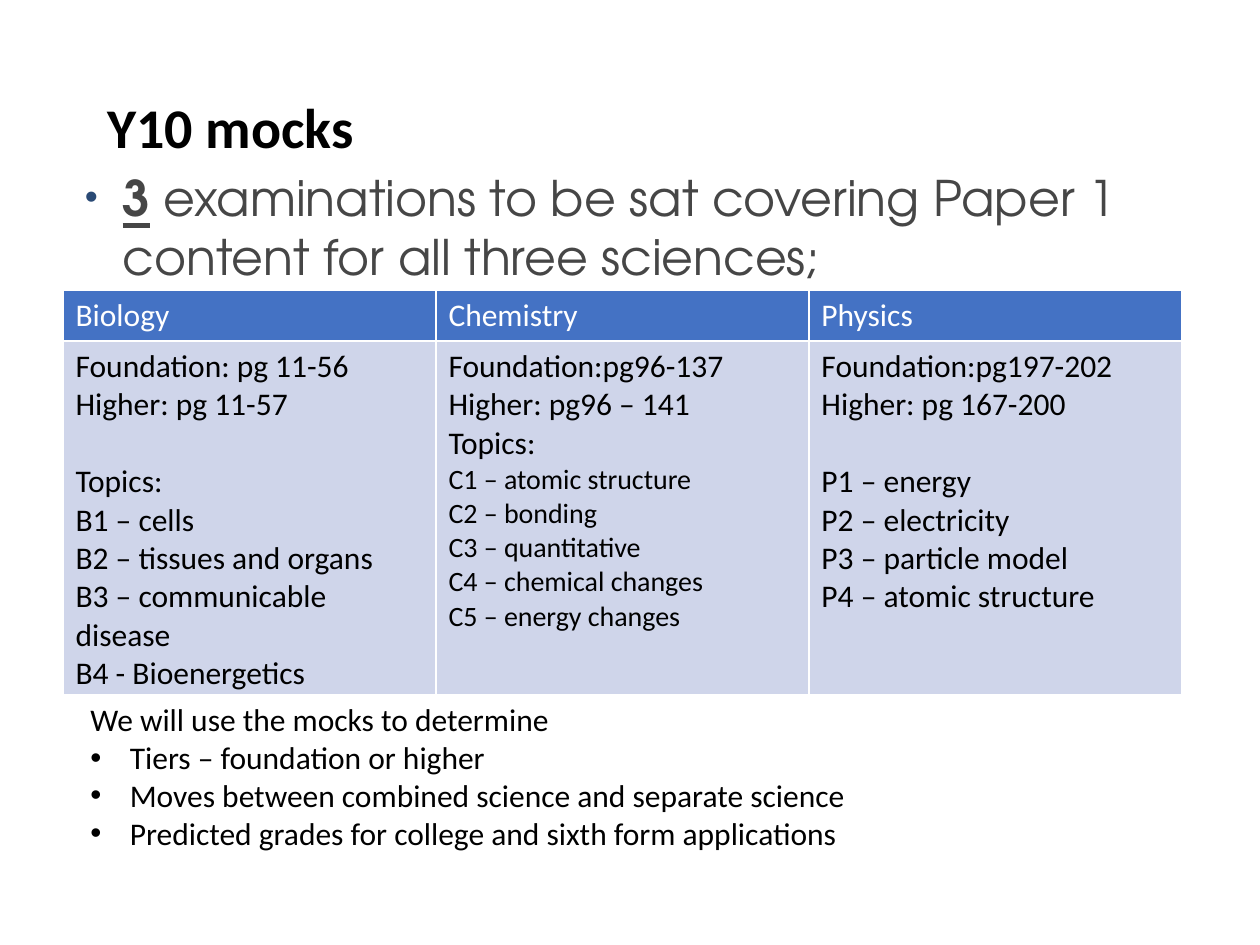
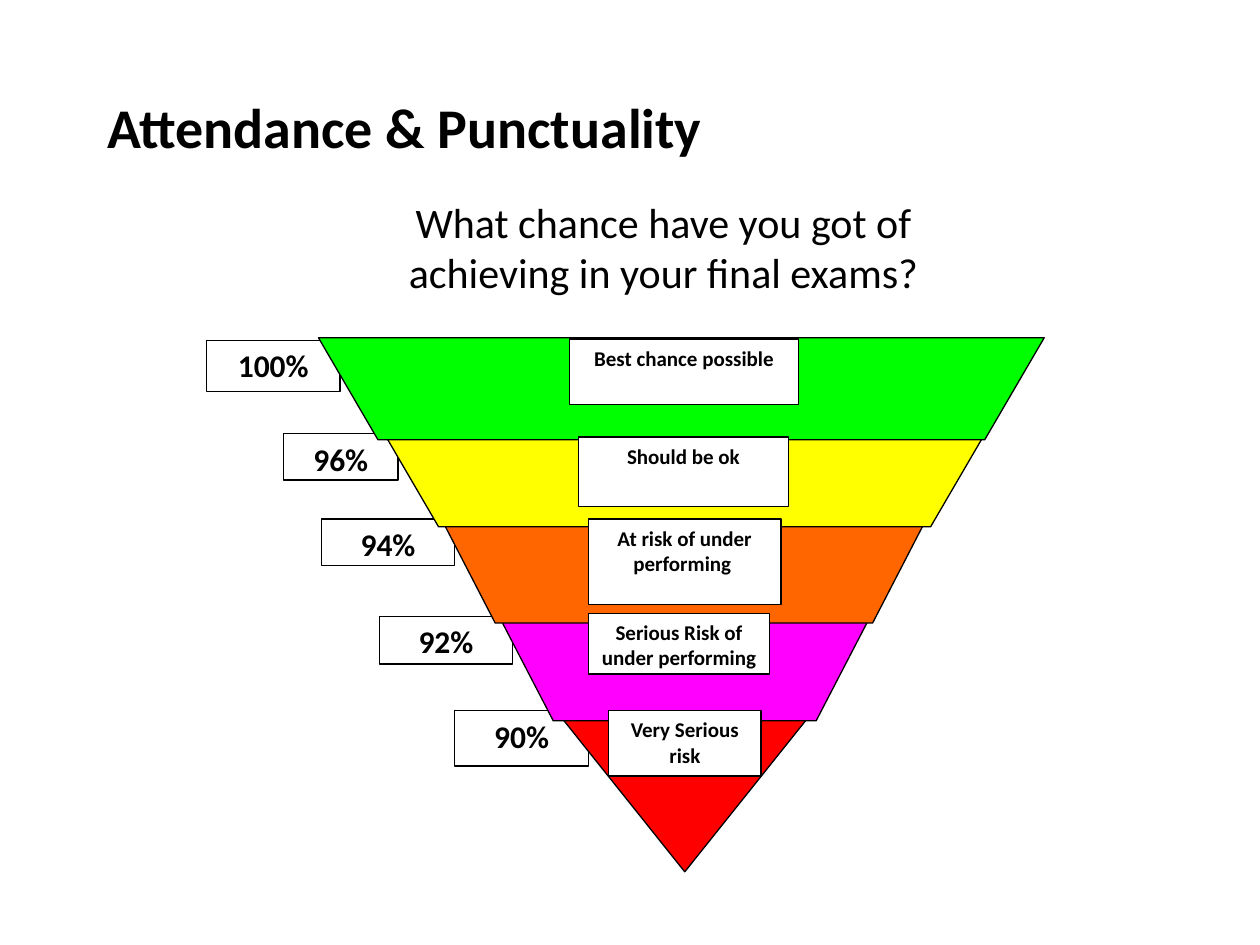
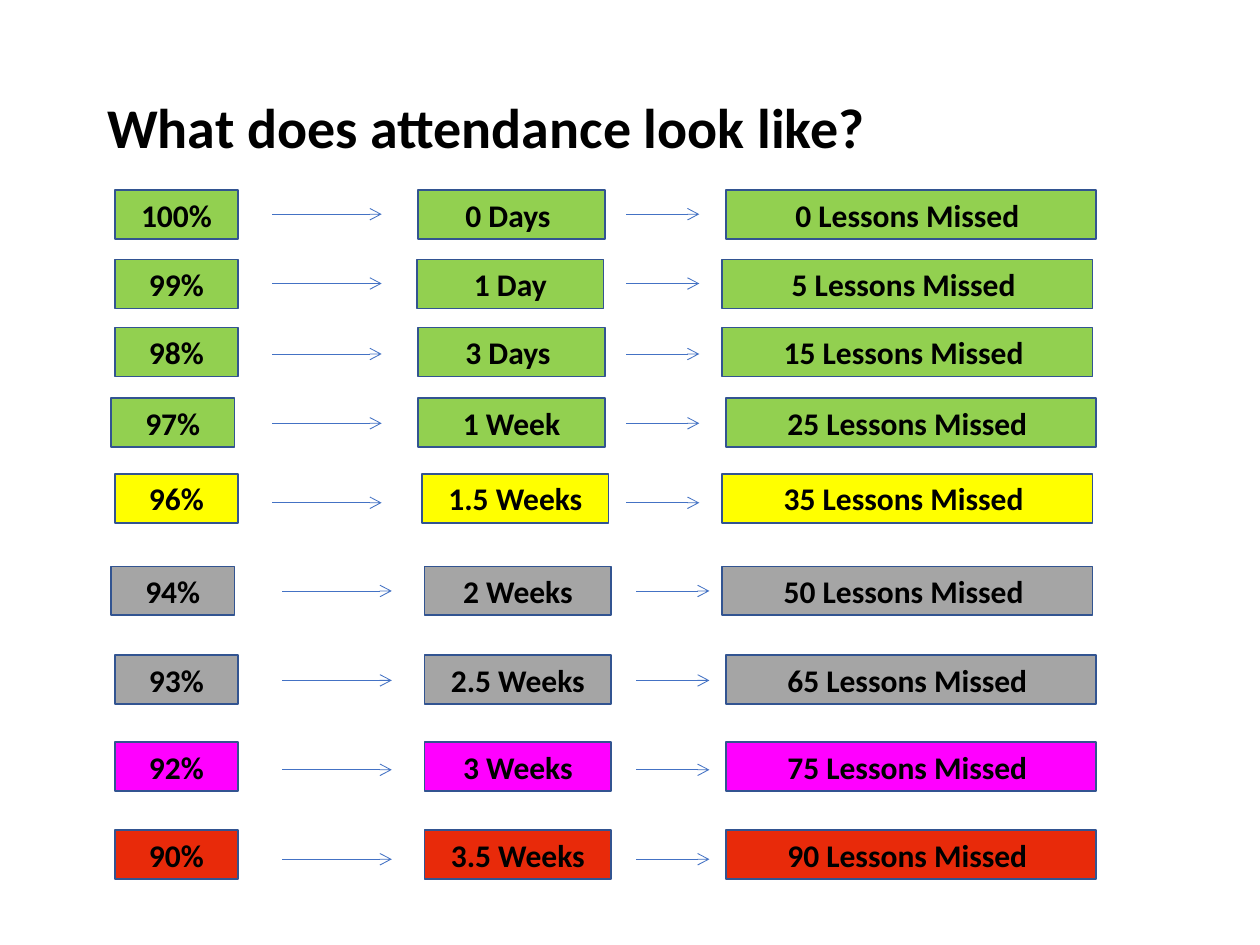
from collections import namedtuple
from dataclasses import dataclass

from lxml.etree import SubElement as Sub
from pptx import Presentation
from pptx.dml.color import RGBColor as Rgb
from pptx.enum.shapes import MSO_CONNECTOR as Wire, MSO_SHAPE as Form
from pptx.enum.text import MSO_ANCHOR as Anchor, PP_ALIGN as Align
from pptx.oxml.ns import qn
from pptx.util import Pt

Box = namedtuple("Box", "x y w h")


@dataclass(frozen=True)
class Theme:
    font: str = "Calibri"
    lead: str = "TeX Gyre Adventor"
    black: str = "000000"
    white: str = "FFFFFF"
    gray: str = "464646"
    navy: str = "2A4A75"
    edge: str = "325491"
    blue: str = "4472C4"
    pale: str = "CFD5EA"
    leaf: str = "92D050"
    green: str = "00FF00"
    yellow: str = "FFFF00"
    orange: str = "FF6600"
    pink: str = "FF00FF"
    red: str = "FF0000"
    brick: str = "E82A0A"
    stone: str = "A5A5A5"
    title: int = 32
    big: int = 28
    ask: int = 24
    body: int = 18
    list: int = 16
    note: int = 12


T = Theme()

COURSES = [
    ("Biology", ["Foundation: pg 11-56", "Higher: pg 11-57"],
     ["Topics:", "B1 – cells", "B2 – tissues and organs",
      "B3 – communicable disease", "B4 - Bioenergetics"], T.body, 22),
    ("Chemistry", ["Foundation:pg96-137", "Higher: pg96 – 141", "Topics:"],
     ["C1 – atomic structure", "C2 – bonding", "C3 – quantitative",
      "C4 – chemical changes", "C5 – energy changes"], T.list, 0),
    ("Physics", ["Foundation:pg197-202", "Higher: pg 167-200"],
     ["P1 – energy", "P2 – electricity", "P3 – particle model",
      "P4 – atomic structure"], T.body, 22),
]

USES = ["Tiers – foundation or higher",
        "Moves between combined science and separate science",
        "Predicted grades for college and sixth form applications"]

TAGS = [
    ("96%", Box(44, 54.7, 65.5, 26.6)),
    ("94%", Box(65.6, 103.6, 76.3, 26.6)),
    ("92%", Box(98.7, 159.1, 76.3, 27.4)),
    ("90%", Box(141.9, 213.1, 76.3, 31.7)),
    ("100%", Box(0, 1.4, 76.3, 29.5)),
]

BANDS = [
    (T.pink, Box(164.2, 153.4, 218.2, 65.5)),
    (T.orange, Box(131, 97.2, 283.7, 65.8)),
    (T.yellow, Box(98.6, 49.7, 349.2, 58.3)),
    (T.green, Box(64, 0, 414.7, 58.3)),
]

NOTES = [
    ("Very Serious risk", Box(229.8, 213.1, 87.1, 37.4)),
    ("Best chance possible", Box(207.4, 0.7, 131, 37.4)),
    ("Should be ok", Box(212.5, 56.8, 120.2, 39.6)),
    ("At risk of under performing ", Box(218.2, 103.6, 110.2, 49)),
    ("Serious Risk of under performing", Box(218.2, 157.6, 103.7, 34.6)),
]

WIDTHS = (70.6, 106.6, 211.7)

ROWS = [
    (0, 13.7, T.leaf, (2.5, 176, 351.7), ("100%", "0 Days ", "0 Lessons Missed ")),
    (39.6, 53.3, T.leaf, (2.5, 175.3, 349.6), ("99%", "1 Day", "5 Lessons Missed ")),
    (78.5, 93.6, T.leaf, (2.5, 176, 349.6), ("98%", "3 Days ", "15 Lessons Missed ")),
    (118.8, 133.2, T.leaf, (0.4, 176, 351.7), ("97%", "1 Week", "25 Lessons Missed ")),
    (162, 178.6, T.yellow, (2.5, 178.2, 349.6), ("96%", "1.5 Weeks", "35 Lessons Missed ")),
    (215, 229, T.stone, (0.4, 179.6, 349.6), ("94%", "2 Weeks", "50 Lessons Missed ")),
    (265.7, 280.1, T.stone, (2.5, 179.6, 351.7), ("93%", "2.5 Weeks", "65 Lessons Missed ")),
    (315.4, 331.2, T.pink, (2.5, 179.6, 351.7), ("92%", "3 Weeks", "75 Lessons Missed ")),
    (365.8, 382.3, T.brick, (2.5, 179.6, 351.7), ("90%", "3.5 Weeks", "90 Lessons Missed ")),
]


def place(box):
    return [Pt(side) for side in box]


def inside(box, part):
    return Box(box.x + part.x, box.y + part.y, part.w, part.h)


def style(para, size, bold=False, color=T.black, align=Align.LEFT, face=T.font):
    para.alignment = align
    font = para.font
    font.name, font.size, font.bold = face, Pt(size), bold
    font.color.rgb = Rgb.from_string(color)


def write(frame, lines, size, **look):
    frame.word_wrap = True
    frame.text = "\n".join(lines)
    for para in frame.paragraphs:
        style(para, size, **look)
    return frame.paragraphs


def bullet(para, left, hang, color=None, scale=100):
    props = para._p.get_or_add_pPr()
    props.set("marL", str(Pt(left)))
    props.set("indent", str(-Pt(hang)))
    if color:
        Sub(Sub(props, qn("a:buClr")), qn("a:srgbClr")).set("val", color)
    Sub(props, qn("a:buSzPct")).set("val", str(scale * 1000))
    Sub(props, qn("a:buFont")).set("typeface", "Arial")
    Sub(props, qn("a:buChar")).set("char", "•")


def paint(shape, fill, edge=T.black, width=0.75):
    shape.shadow.inherit = False
    shape.fill.solid()
    shape.fill.fore_color.rgb = Rgb.from_string(fill)
    shape.line.color.rgb = Rgb.from_string(edge)
    shape.line.width = Pt(width)


def label(slide, box, text, size, fill=T.white, anchor=Anchor.TOP, **line):
    shape = slide.shapes.add_shape(Form.RECTANGLE, *place(box))
    paint(shape, fill, **line)
    write(shape.text_frame, [text], size, bold=True, align=Align.CENTER)
    shape.text_frame.vertical_anchor = anchor


def start(deck, text, width):
    slide = deck.slides.add_slide(deck.slide_layouts[5])
    title = slide.shapes.title
    title.left, title.top, title.width, title.height = place(Box(54, 49, width, 45))
    write(title.text_frame, [text], T.title, bold=True)
    title.text_frame.vertical_anchor = Anchor.TOP
    return slide


def lead(slide, box):
    frame = slide.shapes.add_textbox(*place(box)).text_frame
    frame.word_wrap = True
    para = frame.paragraphs[0]
    bullet(para, 27, 21.6, T.navy, 76)
    para.space_before = Pt(5.6)
    style(para, T.big, color=T.gray, face=T.lead)
    count = para.add_run()
    count.text = "3"
    count.font.bold = count.font.underline = True
    para.add_run().text = " examinations to be sat covering Paper 1 content for all three sciences;"


def uses(slide, box):
    frame = slide.shapes.add_textbox(*place(box)).text_frame
    frame.word_wrap = True
    para = frame.paragraphs[0]
    para.text = "We will use the mocks to determine"
    style(para, T.body)
    for text in USES:
        para = frame.add_paragraph()
        para.text = text
        bullet(para, 22.5, 22.5)
        style(para, T.body)


def topics(slide, box):
    table = slide.shapes.add_table(2, len(COURSES), *place(box)).table
    table.rows[0].height = Pt(29.2)
    table.rows[1].height = Pt(box.h - 29.2)
    for col, (name, pages, parts, size, gap) in enumerate(COURSES):
        table.columns[col].width = Pt(box.w / len(COURSES))
        head, cell = table.cell(0, col), table.cell(1, col)
        write(head.text_frame, [name], T.body, color=T.white)
        paras = write(cell.text_frame, pages + parts, T.body)
        for para in paras[len(pages):]:
            para.font.size = Pt(size)
        paras[len(pages)].space_before = Pt(gap)
        for item, fill in ((head, T.blue), (cell, T.pale)):
            item.fill.solid()
            item.fill.fore_color.rgb = Rgb.from_string(fill)


def band(slide, box, fill, slant=34):
    right, base = box.x + box.w, box.y + box.h
    pen = slide.shapes.build_freeform(Pt(box.x), Pt(box.y))
    ends = [(box.x + slant, base), (right - slant, base), (right, box.y)]
    pen.add_line_segments([(Pt(x), Pt(y)) for x, y in ends], close=True)
    paint(pen.convert_to_shape(), fill)


def funnel(slide, box):
    for text, part in TAGS:
        label(slide, inside(box, part), text, T.body)
    tip = inside(box, Box(191.6, 203, 163.4, 102.2))
    shape = slide.shapes.add_shape(Form.ISOSCELES_TRIANGLE, *place(tip))
    shape.rotation = 180
    paint(shape, T.red)
    for fill, part in BANDS:
        band(slide, inside(box, part), fill)
    for text, part in NOTES:
        label(slide, inside(box, part), text, T.note)


def arrow(slide, x, y, width):
    line = slide.shapes.add_connector(Wire.STRAIGHT, Pt(x), Pt(y), Pt(x + width), Pt(y))
    line.line.color.rgb = Rgb.from_string(T.blue)
    line.line.width = Pt(0.5)
    Sub(line.line._get_or_add_ln(), qn("a:tailEnd")).set("type", "arrow")
    Sub(line._element.spPr, qn("a:effectLst"))


def chain(slide, box):
    for row, (top, mid, fill, lefts, texts) in enumerate(ROWS):
        for left, width, text in zip(lefts, WIDTHS, texts):
            label(slide, inside(box, Box(left, top, width, 28)), text, T.body, fill,
                  Anchor.MIDDLE, edge=T.edge, width=1)
        shift = 5.8 if row > 4 else 0
        for left, width in ((92.5, 62.6), (294.8, 41.8)):
            arrow(slide, box.x + left + shift, box.y + mid, width)


def mocks(deck):
    slide = start(deck, "Y10 mocks", 351)
    lead(slide, Box(36, 92, 648, 167))
    uses(slide, Box(44.6, 396.7, 630, 94.3))
    topics(slide, Box(36, 165.6, 639.4, 231))


def chance(deck):
    slide = start(deck, "Attendance & Punctuality", 363)
    funnel(slide, Box(118, 193, 479, 305))
    ask = slide.shapes.add_textbox(*place(Box(182.2, 108.7, 393.8, 65.5)))
    write(ask.text_frame, ["What chance have you got of achieving in your final exams?"],
          T.ask, align=Align.CENTER)


def missed(deck):
    slide = start(deck, "What does attendance look like?", 482)
    chain(slide, Box(63, 108.7, 564, 394))


def main():
    deck = Presentation()
    deck.slide_width, deck.slide_height = Pt(720), Pt(540)
    for build in (mocks, chance, missed):
        build(deck)
    deck.save("out.pptx")


if __name__ == "__main__":
    main()
